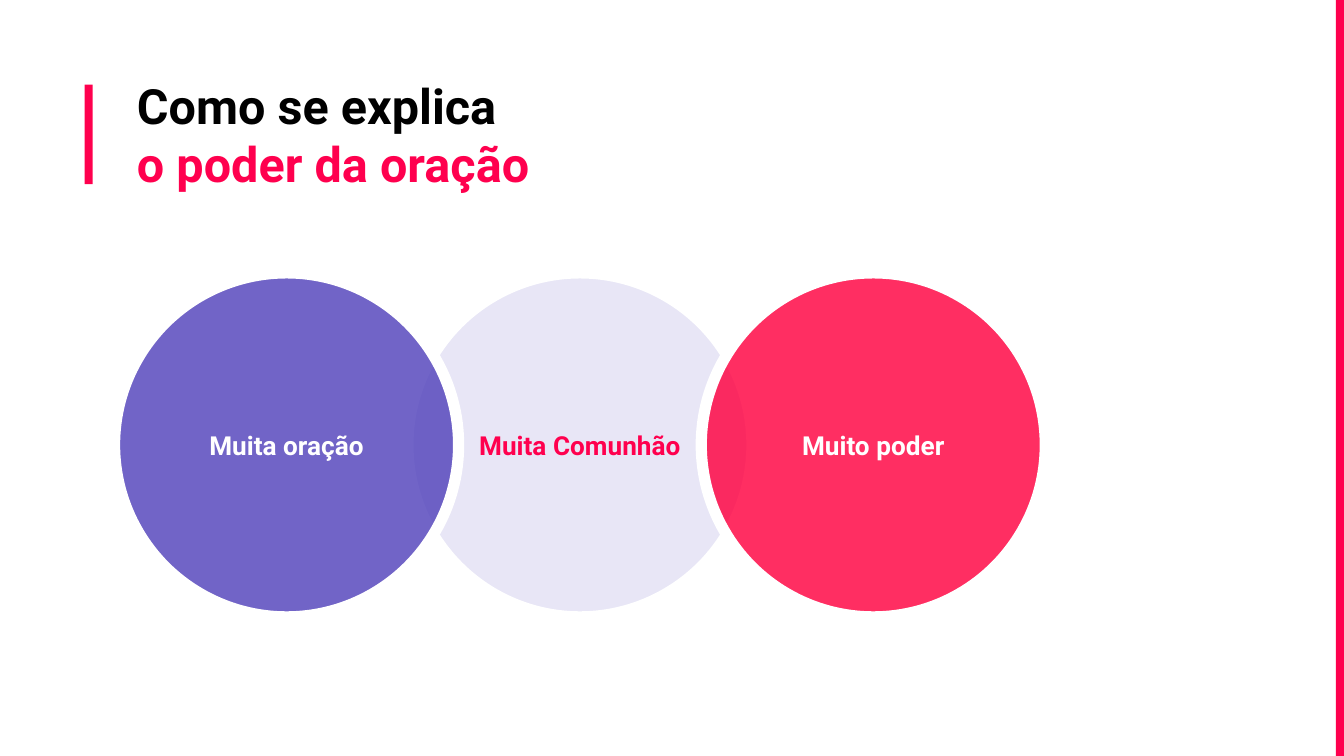
import pptx
import pptx.util
import pptx.dml.color
import pptx.enum.shapes
import pptx.enum.text
import pptx.oxml
import pptx.oxml.ns

Pt = pptx.util.Pt
RGB = pptx.dml.color.RGBColor
SHAPE = pptx.enum.shapes.MSO_SHAPE
ALIGN = pptx.enum.text.PP_ALIGN
ANCHOR = pptx.enum.text.MSO_ANCHOR

RED = RGB(0xFF, 0x00, 0x4E)
ROSE = RGB(0xFF, 0x00, 0x40)
PURPLE = RGB(0x52, 0x43, 0xBB)
PALE = RGB(0xE8, 0xE6, 0xF6)
BLACK = RGB(0x00, 0x00, 0x00)
WHITE = RGB(0xFF, 0xFF, 0xFF)

WIDTH, HEIGHT = 720, 405
BAR = 4.3


def add_shape(slide, kind, box, color):
    shape = slide.shapes.add_shape(kind, *map(Pt, box))
    shape.shadow.inherit = False
    shape.fill.solid()
    shape.fill.fore_color.rgb = color
    shape.line.fill.background()
    return shape


def set_frame(frame, anchor):
    frame.word_wrap = True
    frame.vertical_anchor = anchor
    frame.margin_left = frame.margin_right = Pt(7.2)
    frame.margin_top = frame.margin_bottom = Pt(7.2)


def set_font(font, size, color):
    font.name = "Roboto"
    font.size = Pt(size)
    font.bold = True
    font.color.rgb = color


def set_alpha(shape, percent):
    color = shape.fill._xPr.find(".//" + pptx.oxml.ns.qn("a:srgbClr"))
    color.append(pptx.oxml.parse_xml(
        f'<a:alpha {pptx.oxml.ns.nsdecls("a")} val="{percent * 1000}"/>'))


def add_title(slide, box):
    left, top, width, height = box
    # Accent bar beside the title
    add_shape(slide, SHAPE.RECTANGLE, (left, top + 12, BAR, 53.3), RED)
    # Two lines, the second in red
    text = slide.shapes.add_textbox(
        Pt(left + 20.9), Pt(top), Pt(width - 20.9), Pt(height))
    set_frame(text.text_frame, ANCHOR.TOP)
    para = text.text_frame.paragraphs[0]
    set_font(para.font, 26, BLACK)
    para.add_run().text = "Como se explica"
    para.add_line_break()
    second = para.add_run()
    second.text = "o poder da oração"
    second.font.color.rgb = RED


def add_circles(slide, box):
    left, top, width, size = box
    step = (width - size) / 2
    # Column, label, fill, opacity and text colour; the middle lies at the back
    circles = [
        (1, "Muita Comunhão", PALE, 100, RED),
        (0, "Muita oração", PURPLE, 82, WHITE),
        (2, "Muito poder", ROSE, 82, WHITE),
    ]
    for column, label, fill, percent, color in circles:
        place = (left + column * step, top, size, size)
        circle = add_shape(slide, SHAPE.OVAL, place, fill)
        if percent < 100:
            set_alpha(circle, percent)
        circle.line.color.rgb = WHITE
        circle.line.width = Pt(6)
        set_frame(circle.text_frame, ANCHOR.MIDDLE)
        para = circle.text_frame.paragraphs[0]
        para.text = label
        para.alignment = ALIGN.CENTER
        set_font(para.font, 14, color)


def main():
    deck = pptx.Presentation()
    deck.slide_width, deck.slide_height = Pt(WIDTH), Pt(HEIGHT)
    slide = deck.slides.add_slide(deck.slide_layouts[6])
    # Strip along the right edge
    add_shape(slide, SHAPE.RECTANGLE, (WIDTH - BAR, 0, BAR, HEIGHT), RED)
    add_title(slide, (45.4, 33.4, 275, 67.7))
    add_circles(slide, (61.4, 146.2, 498.6, 184.3))
    deck.save("out.pptx")


if __name__ == "__main__":
    main()
